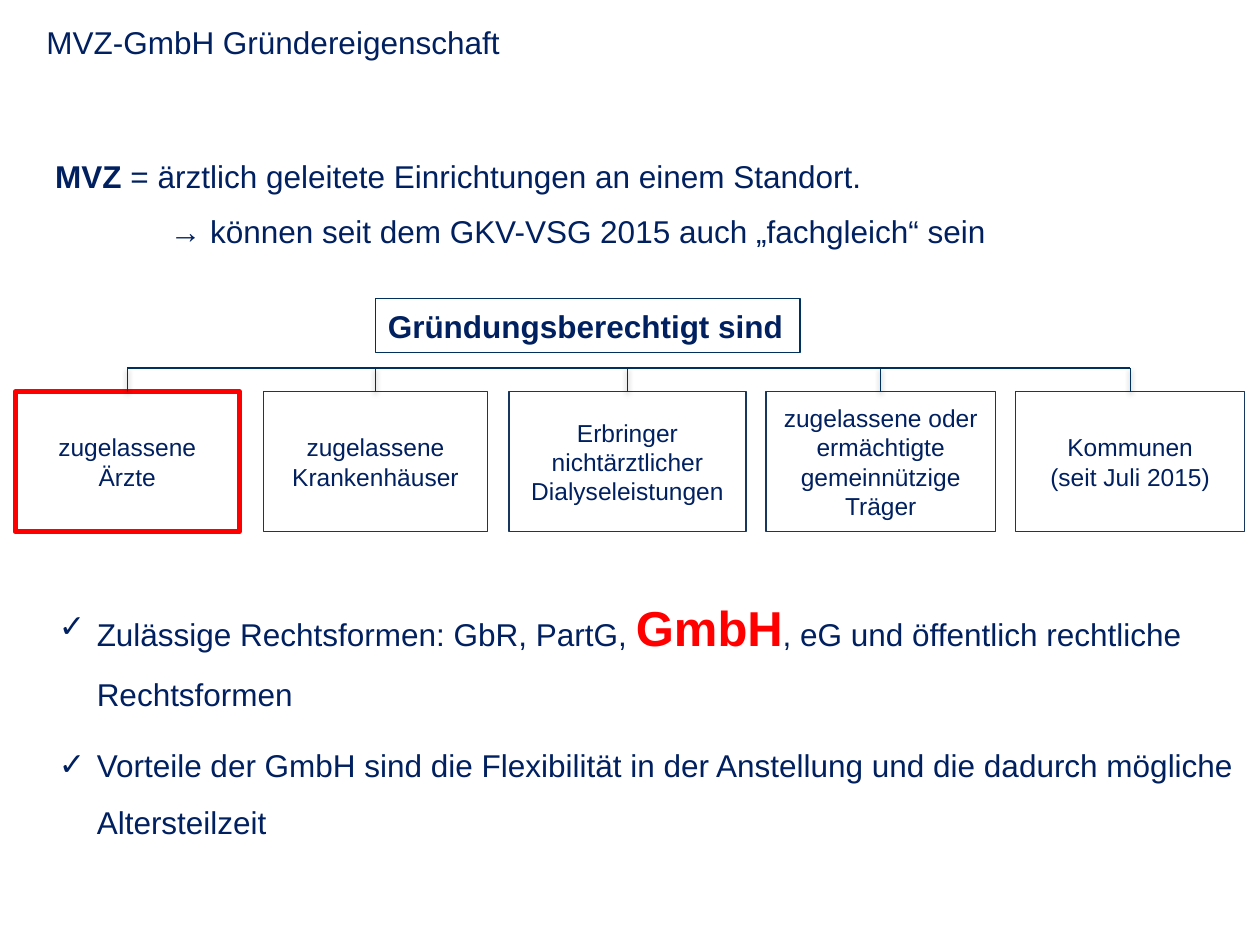
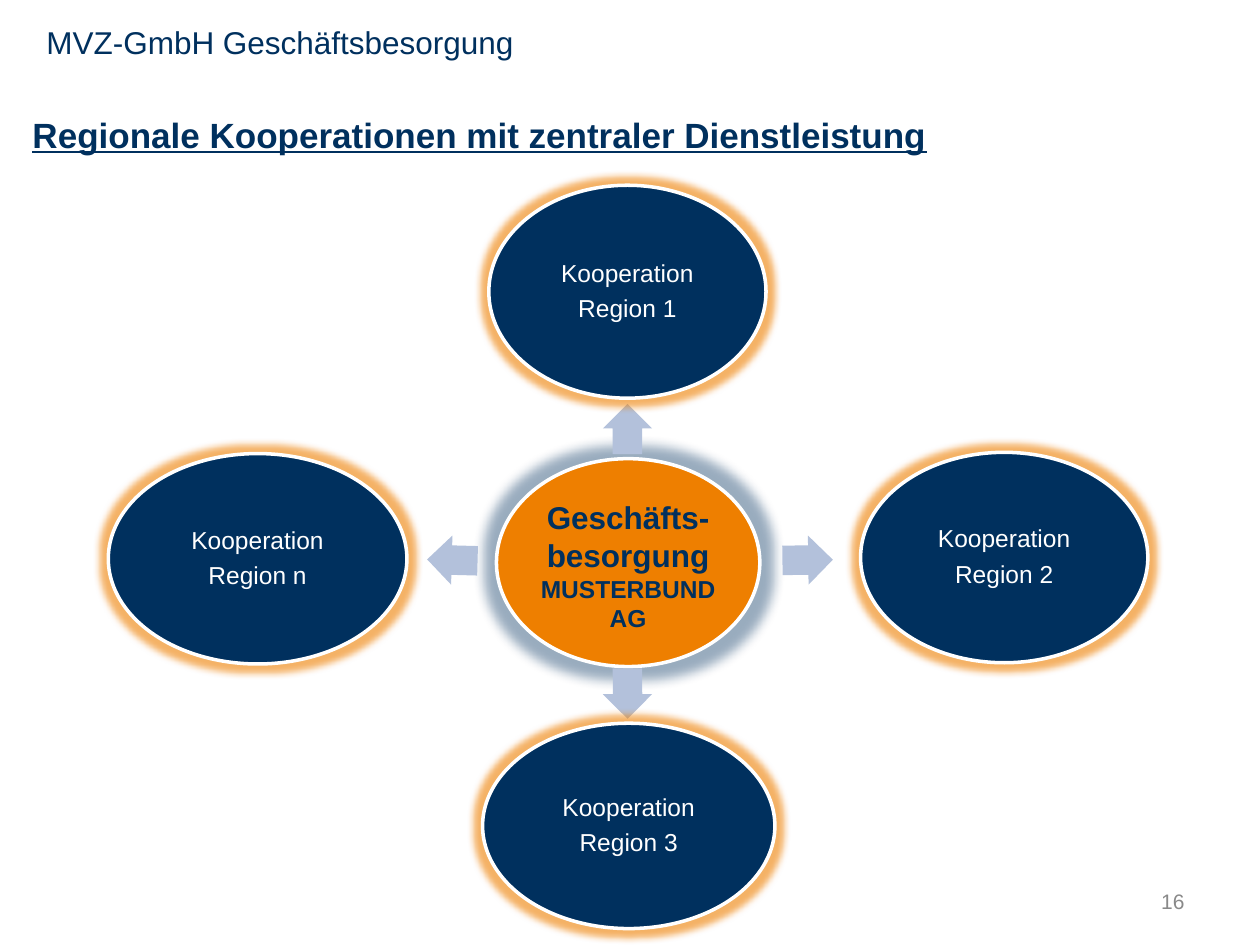
from dataclasses import dataclass

import lxml.etree
import pptx
import pptx.dml.color
import pptx.enum.shapes
import pptx.enum.text
import pptx.oxml.ns
import pptx.util

PX = 9144
SHAPE = pptx.enum.shapes.MSO_SHAPE
ALIGN = pptx.enum.text.PP_ALIGN
ANCHOR = pptx.enum.text.MSO_ANCHOR


@dataclass(frozen=True)
class Theme:
    font: str = "Arial"
    ink: str = "002060"
    navy: str = "00305E"
    box_line: str = "17375E"
    red: str = "FF0000"
    orange: str = "EE7F00"
    arrow: str = "B3C1DB"
    grey: str = "898989"
    white: str = "FFFFFF"
    black: str = "000000"
    footer: int = 12
    label: int = 14
    body: int = 18
    heading: int = 20
    emphasis: int = 28


def px(length):
    return pptx.util.Emu(length * PX)


def rgb(value):
    return pptx.dml.color.RGBColor.from_string(value)


def add_xml(parent, tag, **attributes):
    values = {name: str(value) for name, value in attributes.items()}
    return lxml.etree.SubElement(parent, pptx.oxml.ns.qn(tag), values)


def add_effect(effects, tag, color, alpha, **attributes):
    effect = add_xml(effects, tag, **attributes)
    tint = add_xml(effect, "a:srgbClr", val=color)
    add_xml(tint, "a:alpha", val=alpha * 1000)


class Deck:
    def __init__(self, theme):
        self.theme = theme
        self.presentation = pptx.Presentation()
        self.presentation.slide_width = px(1000)
        self.presentation.slide_height = px(750)
        self.slide = None

    def new_slide(self, title, color):
        layout = self.presentation.slide_layouts[6]
        self.slide = self.presentation.slides.add_slide(layout)
        frame = self.text_box(27, 13, 701, 40)
        self.paragraph(frame, [(title, {"color": color})])

    def text_box(self, left, top, width, height, anchor=ANCHOR.TOP):
        box = self.slide.shapes.add_textbox(px(left), px(top), px(width), px(height))
        box.text_frame.word_wrap = True
        box.text_frame.vertical_anchor = anchor
        return box.text_frame

    def paragraph(self, frame, runs, align=ALIGN.LEFT, spacing=None, after=0,
                  margin=0, indent=0, bullet=None):
        first = frame.paragraphs[0]
        paragraph = frame.add_paragraph() if first.runs else first
        paragraph.alignment = align
        paragraph.space_after = pptx.util.Pt(after)
        if spacing:
            paragraph.line_spacing = spacing
        properties = paragraph._p.get_or_add_pPr()
        properties.set("marL", str(margin * PX))
        properties.set("indent", str(indent * PX))
        if bullet:
            add_xml(properties, "a:buFont", typeface=self.theme.font)
            add_xml(properties, "a:buChar", char=bullet)
        for text, style in runs:
            self.run(paragraph, text, **style)

    def run(self, paragraph, text, size=None, color=None, bold=False, underline=False):
        for number, line in enumerate(text.split("\n")):
            if number:
                paragraph.add_line_break()
            run = paragraph.add_run()
            run.text = line
            run.font.name = self.theme.font
            run.font.size = pptx.util.Pt(size or self.theme.body)
            run.font.color.rgb = rgb(color or self.theme.ink)
            run.font.bold = bold
            run.font.underline = underline

    def shape(self, kind, left, top, width, height, fill=None, line=None, weight=0.75):
        shape = self.slide.shapes.add_shape(kind, px(left), px(top), px(width), px(height))
        shape.shadow.inherit = False
        if fill:
            shape.fill.solid()
            shape.fill.fore_color.rgb = rgb(fill)
        else:
            shape.fill.background()
        if line:
            shape.line.color.rgb = rgb(line)
            shape.line.width = pptx.util.Pt(weight)
        else:
            shape.line.fill.background()
        shape.text_frame.word_wrap = True
        shape.text_frame.vertical_anchor = ANCHOR.MIDDLE
        return shape

    def ellipse(self, left, top, width, height, fill, glow, radius, alpha, inset):
        ellipse = self.shape(SHAPE.OVAL, left, top, width, height, fill, self.theme.white, 2)
        effects = ellipse._element.spPr.find(pptx.oxml.ns.qn("a:effectLst"))
        add_effect(effects, "a:glow", glow, alpha, rad=radius * PX)
        frame = ellipse.text_frame
        frame.margin_left = frame.margin_right = px(inset)
        frame.margin_top = frame.margin_bottom = px(inset)
        return frame

    def arrow(self, left, top, rotation):
        arrow = self.shape(SHAPE.RIGHT_ARROW, left, top, 40, 39, self.theme.arrow)
        arrow.adjustments[0] = 0.6
        arrow.adjustments[1] = 0.5
        arrow.rotation = rotation

    def connector(self, start, end, target=None):
        connector = self.slide.shapes.add_connector(
            pptx.enum.shapes.MSO_CONNECTOR.STRAIGHT, *map(px, start + end))
        connector.line.color.rgb = rgb(self.theme.navy)
        connector.line.width = pptx.util.Pt(0.75)
        effects = add_xml(connector._element.spPr, "a:effectLst")
        add_effect(effects, "a:outerShdw", self.theme.black, 38,
                   blurRad=pptx.util.Pt(3.1), dist=pptx.util.Pt(1.6),
                   dir=5400000, rotWithShape=0)
        if target:
            connector.end_connect(target, 0)


def build_founders(deck):
    theme = deck.theme
    deck.new_slide("MVZ-GmbH Gründereigenschaft", theme.ink)

    definition = deck.text_box(27, 118, 866, 86)
    deck.paragraph(definition, [
        ("MVZ ", {"bold": True}),
        ("= ärztlich geleitete Einrichtungen an einem Standort.", {}),
    ], spacing=1.07, after=8, margin=7)
    deck.paragraph(definition, [
        ("→ können seit dem GKV-VSG 2015 auch „fachgleich“ sein", {}),
    ], spacing=1.07, after=8, margin=98)

    heading = deck.shape(SHAPE.RECTANGLE, 298, 237, 337, 43, line=theme.navy).text_frame
    heading.word_wrap = False
    heading.vertical_anchor = ANCHOR.TOP
    deck.paragraph(heading, [("Gründungsberechtigt sind", {"bold": True})], spacing=1.07)

    founders = [
        (12, 178, "zugelassene Ärzte", theme.red, 3),
        (209, 178, "zugelassene Krankenhäuser", theme.box_line, 0.75),
        (404, 188, "Erbringer nichtärztlicher Dialyseleistungen", theme.box_line, 0.75),
        (608, 182, "zugelassene oder ermächtigte gemeinnützige Träger",
         theme.box_line, 0.75),
        (806, 182, "Kommunen\n(seit Juli 2015)", theme.box_line, 0.75),
    ]
    rail_top, founder_top = 292, 311
    centres = [left + width // 2 for left, width, *_ in founders]
    deck.connector((centres[0], rail_top), (centres[-1], rail_top))
    for centre, (left, width, name, line, weight) in zip(centres, founders):
        founder = deck.shape(SHAPE.RECTANGLE, left, founder_top, width, 111,
                             line=line, weight=weight)
        deck.paragraph(founder.text_frame, [(name, {"size": theme.label})], ALIGN.CENTER)
        deck.connector((centre, rail_top), (centre, founder_top), founder)

    legal_forms = deck.text_box(27, 450, 970, 222, ANCHOR.BOTTOM)
    points = [
        ([("Zulässige Rechtsformen: GbR, PartG, ", {}),
          ("GmbH", {"size": theme.emphasis, "color": theme.red, "bold": True}),
          (", eG und öffentlich rechtliche Rechtsformen", {})], 8),
        ([("Vorteile der GmbH sind die Flexibilität in der Anstellung "
           "und die dadurch mögliche Altersteilzeit", {})], 0),
    ]
    for runs, after in points:
        deck.paragraph(legal_forms, runs, spacing=1.5, after=after,
                       margin=40, indent=-30, bullet="✓")


def build_services(deck):
    theme = deck.theme
    deck.new_slide("MVZ-GmbH Geschäftsbesorgung", theme.navy)

    heading = deck.text_box(16, 85, 980, 44)
    deck.paragraph(heading, [
        ("Regionale Kooperationen mit zentraler Dienstleistung",
         {"size": theme.heading, "color": theme.navy, "bold": True, "underline": True}),
    ])

    hub = deck.ellipse(394, 364, 209, 165, theme.orange, theme.navy, 18, 40, 0)
    hub.margin_top = px(4)
    for text, size in [("Geschäfts-besorgung", theme.body), ("MUSTERBUND AG", theme.label)]:
        style = {"size": size, "color": theme.navy, "bold": True}
        deck.paragraph(hub, [(text, style)], ALIGN.CENTER)

    regions = [
        ("Region 1", (388, 147, 220, 169), (478, 321, 270)),
        ("Region 2", (683, 359, 228, 167), (621, 425, 359.2)),
        ("Region 3", (383, 574, 232, 163), (478, 531, 89.9)),
        ("Region n", (86, 360, 237, 167), (339, 425, 181.6)),
    ]
    style = {"size": theme.label, "color": theme.white}
    for name, bounds, arrow in regions:
        deck.arrow(*arrow)
        region = deck.ellipse(*bounds, theme.navy, theme.orange, 11, 60, 2)
        for text, after in [("Kooperation", 5), (name, 0)]:
            deck.paragraph(region, [(text, style)], ALIGN.CENTER, 0.9, after)

    page_number = deck.text_box(717, 695, 233, 40, ANCHOR.MIDDLE)
    deck.paragraph(page_number, [("16", {"size": theme.footer, "color": theme.grey})],
                   ALIGN.RIGHT)


def main():
    deck = Deck(Theme())
    build_founders(deck)
    build_services(deck)
    deck.presentation.save("out.pptx")


if __name__ == "__main__":
    main()
